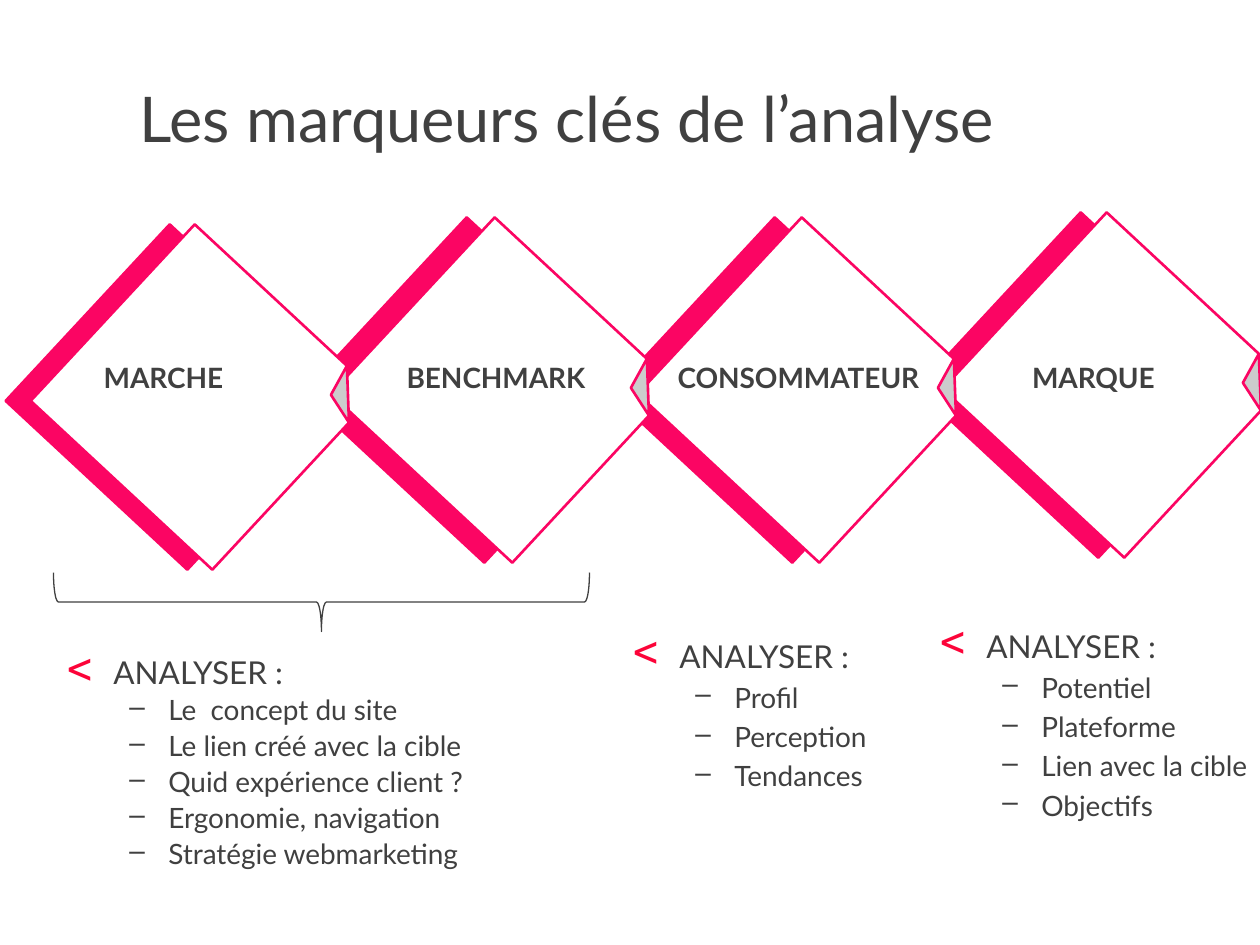
from dataclasses import dataclass

from lxml import etree
from pptx import Presentation
from pptx import util as u
from pptx.dml.color import RGBColor
from pptx.enum import shapes, text
from pptx.oxml import ns

PX = u.Inches(1) // 126


@dataclass(frozen=True)
class Theme:
    font: str = "Lato"
    ink: str = "404040"
    pink: str = "FB0563"
    white: str = "FFFFFF"
    bullet: str = "FC0439"
    title_size: int = 36
    heading_size: int = 18
    body_size: int = 16


def px(*lengths):
    return [length * PX for length in lengths]


def write(paragraph, content, *, theme, size, bold=False, align=None):
    paragraph.alignment = align
    run = paragraph.add_run()
    run.text = content
    font = run.font
    font.name, font.size, font.bold = theme.font, u.Pt(size), bold
    font.color.rgb = RGBColor.from_string(theme.ink)


def set_bullet(paragraph, char, margin, indent, color=None, percent=None):
    properties = paragraph._p.get_or_add_pPr()
    properties.set("marL", str(margin * PX))
    properties.set("indent", str(-indent * PX))
    if color:
        holder = etree.SubElement(properties, ns.qn("a:buClr"))
        etree.SubElement(holder, ns.qn("a:srgbClr"), val=color)
    if percent:
        etree.SubElement(properties, ns.qn("a:buSzPct"), val=str(percent * 1000))
    etree.SubElement(properties, ns.qn("a:buChar"), char=char)


class SlideBuilder:
    def __init__(self, slide, theme):
        self.slide = slide
        self.theme = theme

    def text_frame(self, left, top, width, height, anchor=text.MSO_ANCHOR.TOP):
        box = self.slide.shapes.add_textbox(*px(left, top, width, height))
        frame = box.text_frame
        frame.word_wrap = True
        frame.vertical_anchor = anchor
        return frame

    def label(self, content, box, size, bold=False, anchor=text.MSO_ANCHOR.TOP):
        frame = self.text_frame(*box, anchor=anchor)
        write(frame.paragraphs[0], content, theme=self.theme, size=size,
              bold=bold, align=text.PP_ALIGN.CENTER)

    def outline(self, parent, kind, box, rotation, line, weight, fill=None):
        shape = parent.add_shape(kind, *px(*box))
        shape.shadow.inherit = False
        shape.rotation = rotation
        if fill:
            shape.fill.solid()
            shape.fill.fore_color.rgb = RGBColor.from_string(fill)
        else:
            shape.fill.background()
        shape.line.color.rgb = RGBColor.from_string(line)
        shape.line.width = u.Pt(weight)

    def diamond(self, back_left, front_left, top):
        group = self.slide.shapes.add_group_shape()
        layers = ((back_left, self.theme.pink), (front_left, self.theme.white))
        for left, fill in layers:
            self.outline(group.shapes, shapes.MSO_SHAPE.FOLDED_CORNER,
                         (left, top, 241, 248), 312.9, self.theme.pink, 1.5, fill)

    def brace(self, box):
        self.outline(self.slide.shapes, shapes.MSO_SHAPE.LEFT_BRACE, box,
                     270, self.theme.ink, 0.75)

    def analysis(self, items, box, line_spacing):
        frame = self.text_frame(*box)
        heading = frame.paragraphs[0]
        heading.line_spacing = line_spacing
        set_bullet(heading, "<", 47, 47, self.theme.bullet, 144)
        write(heading, "ANALYSER :", theme=self.theme, size=self.theme.heading_size)
        for item in items:
            paragraph = frame.add_paragraph()
            paragraph.level = 1
            paragraph.line_spacing = line_spacing
            paragraph.space_before = u.Pt(self.theme.body_size * 0.2)
            set_bullet(paragraph, "–", 102, 39)
            write(paragraph, item, theme=self.theme, size=self.theme.body_size)


DIAMONDS = ((969, 995, 261), (663, 690, 266), (355, 383, 266), (58, 83, 273))
LABELS = (
    ("MARCHE", 74, 179),
    ("BENCHMARK", 372, 248),
    ("CONSOMMATEUR", 660, 277),
    ("MARQUE", 955, 277),
)
ANALYSES = (
    (("Le  concept du site", "Le lien créé avec la cible",
      "Quid expérience client ?", "Ergonomie, navigation",
      "Stratégie webmarketing"), (54, 651, 546, 238), 0.9),
    (("Profil", "Perception", "Tendances"), (620, 631, 357, 238), 1.0),
    (("Potentiel", "Plateforme", "Lien avec la cible", "Objectifs"),
     (927, 621, 536, 238), 1.0),
)


def main():
    presentation = Presentation()
    presentation.slide_width, presentation.slide_height = px(1260, 945)
    slide = presentation.slides.add_slide(presentation.slide_layouts[6])
    theme = Theme()
    builder = SlideBuilder(slide, theme)

    for diamond in DIAMONDS:
        builder.diamond(*diamond)
    builder.label("Les marqueurs clés de l’analyse", (0, 38, 1134, 158),
                  theme.title_size, anchor=text.MSO_ANCHOR.MIDDLE)
    for content, left, width in LABELS:
        builder.label(content, (left, 354, width, 47), theme.body_size, bold=True)
    builder.brace((292, 334, 59, 536))
    for items, box, line_spacing in ANALYSES:
        builder.analysis(items, box, line_spacing)

    presentation.save("out.pptx")


if __name__ == "__main__":
    main()
